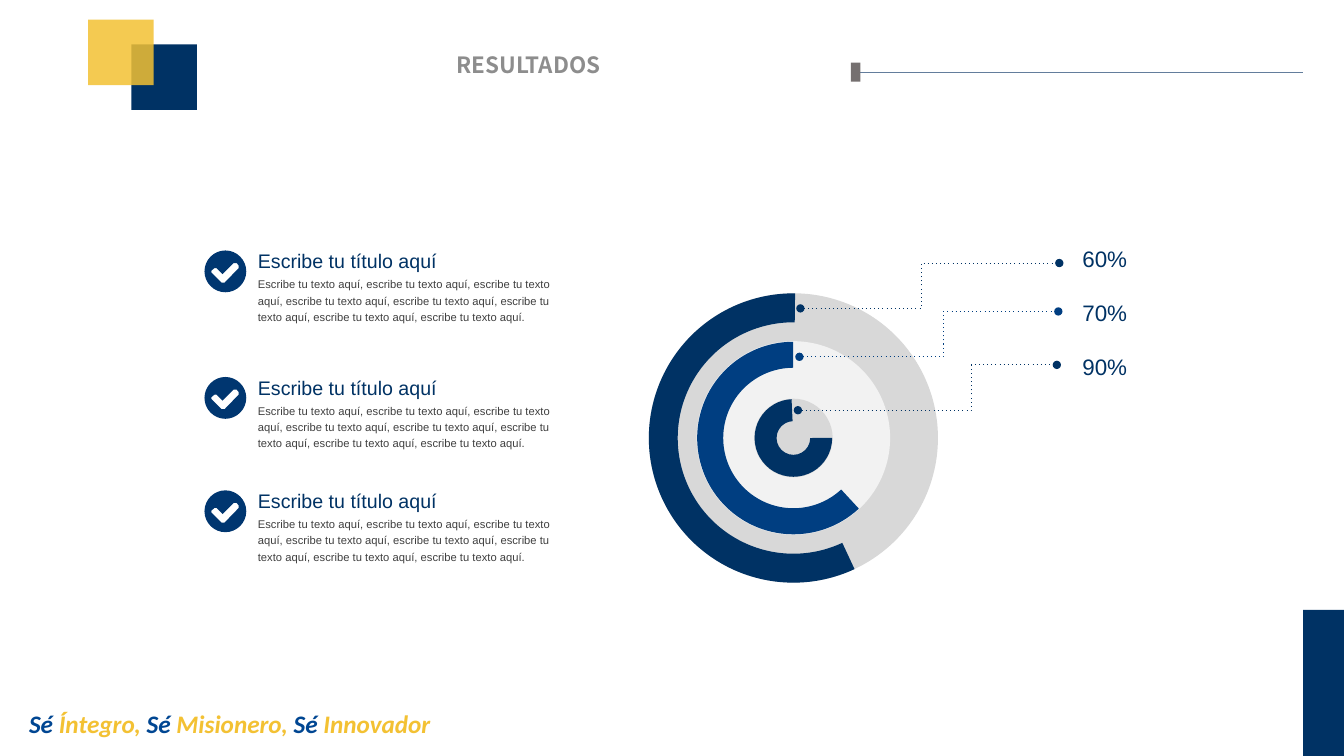
from dataclasses import dataclass

from lxml import etree
from pptx import Presentation
from pptx.dml.color import RGBColor
from pptx.enum.shapes import MSO_CONNECTOR, MSO_SHAPE
from pptx.enum.text import MSO_ANCHOR, MSO_AUTO_SIZE, PP_ALIGN
from pptx.oxml.ns import qn
from pptx.util import Inches, Pt

RECT, OVAL, ARC = MSO_SHAPE.RECTANGLE, MSO_SHAPE.OVAL, MSO_SHAPE.BLOCK_ARC
LINE, ELBOW = MSO_CONNECTOR.STRAIGHT, MSO_CONNECTOR.ELBOW
LEFT, MID = PP_ALIGN.LEFT, PP_ALIGN.CENTER
TOP, BASE = MSO_ANCHOR.TOP, MSO_ANCHOR.BOTTOM
GROW, FIXED = MSO_AUTO_SIZE.SHAPE_TO_FIT_TEXT, MSO_AUTO_SIZE.NONE

COLS, ROWS = 133.4, 75
CELL = Inches(0.1)
CURVE = 0.55


@dataclass(frozen=True)
class Theme:
    navy: str = "003264"
    blue: str = "003E81"
    badge: str = "003670"
    motto: str = "004692"
    gold: str = "F3C133"
    gray: str = "D8D8D8"
    pale: str = "F2F2F2"
    stone: str = "757070"
    rule: str = "637D9C"
    head: str = "8D8D8D"
    ink: str = "3F3F3F"
    sans: str = "Arial"
    slant: str = "Calibri"
    title: str = "Noto Sans CJK SC"
    large: int = 18
    main: int = 16
    sub: int = 14
    small: int = 8


def grid(*cells):
    return [round(cell * CELL) for cell in cells]


def write(frame, text, size, tint, face, align=LEFT, gap=1.2, bold=False,
          slant=False, anchor=TOP, inset=(0, 0), wrap=True, fit=GROW):
    frame.word_wrap, frame.auto_size = wrap, fit
    frame.vertical_anchor = anchor
    frame.margin_left = frame.margin_right = grid(inset[0])[0]
    frame.margin_top = frame.margin_bottom = grid(inset[1])[0]
    para = frame.paragraphs[0]
    para.alignment, para.line_spacing = align, gap
    for part, color in [(text, tint)] if isinstance(text, str) else text:
        run = para.add_run()
        run.text = part
        font = run.font
        font.size, font.name, font.bold, font.italic = Pt(size), face, bold, slant
        font.color.rgb = RGBColor.from_string(color)


class Board:
    def __init__(self, deck, theme):
        self.theme = theme
        self.slide = deck.slides.add_slide(deck.slide_layouts[5])
        self.shapes = self.slide.shapes

    def paint(self, shape, tint):
        shape.shadow.inherit = False
        shape.fill.solid()
        shape.fill.fore_color.rgb = RGBColor.from_string(tint)
        shape.line.fill.background()
        return shape

    def block(self, kind, x, y, w, h, tint, alpha=None):
        shape = self.paint(self.shapes.add_shape(kind, *grid(x, y, w, h)), tint)
        if alpha:
            color = shape.fill._xPr.find(".//" + qn("a:srgbClr"))
            etree.SubElement(color, qn("a:alpha"), val=str(alpha * 1000))
        return shape

    def disc(self, x, y, size, tint, kind=OVAL):
        return self.block(kind, x - size / 2, y - size / 2, size, size, tint)

    def arc(self, x, y, size, tint, marks):
        shape = self.disc(x, y, size, tint, ARC)
        shape.rotation = 180
        for index, mark in enumerate(marks):
            shape.adjustments[index] = mark

    def line(self, kind, x, y, end, stop, tint, bend=None):
        link = self.shapes.add_connector(kind, *grid(x, y, end, stop))
        link.line.width = Pt(0.75)
        link.line.color.rgb = RGBColor.from_string(tint)
        props = link._element.spPr
        if bend:
            stroke = props.find(qn("a:ln"))
            etree.SubElement(stroke, qn("a:prstDash"), val="dot")
            for tip in ("a:headEnd", "a:tailEnd"):
                etree.SubElement(stroke, qn(tip), type="oval")
            etree.SubElement(props.find(".//" + qn("a:avLst")), qn("a:gd"),
                             name="adj1", fmla=f"val {round(bend * 100000)}")
        etree.SubElement(props, qn("a:effectLst"))

    def label(self, x, y, w, h, text, size, tint, face=None, **form):
        box = self.shapes.add_textbox(*grid(x, y, w, h))
        write(box.text_frame, text, size, tint, face or self.theme.sans, **form)

    def title(self, x, y, w, h, text):
        box = self.shapes.title
        box.left, box.top, box.width, box.height = grid(x, y, w, h)
        write(box.text_frame, text, self.theme.main, self.theme.head,
              self.theme.title, align=MID, bold=True, inset=(1.3, 1.3), fit=FIXED)

    def check(self, x, y, size):
        half = size / 2
        ring = [(half, size), (0, half), (half, 0), (size, half), (half, size)]
        tick = [(3.4, 1.5), (3.2, 1.25), (2.9, 1.25), (1.8, 2.35), (1.2, 1.75),
                (1, 1.75), (0.7, 2), (0.7, 2.2), (1.7, 3.2), (2, 3.2),
                (3.4, 1.75)]
        outer, inner = [[grid(x + dx, y + dy) for dx, dy in path]
                        for path in (ring, tick)]
        pen = self.shapes.build_freeform(*outer[0])
        pen.add_line_segments(outer[1:], close=True)
        pen.move_to(*inner[0])
        pen.add_line_segments(inner[1:], close=True)
        shape = self.paint(pen.convert_to_shape(), self.theme.badge)
        sides = shape._element.findall(".//" + qn("a:lnTo"))
        for side, (px, py), (qx, qy) in zip(sides, ring, ring[1:]):
            side.tag = qn("a:cubicBezTo")
            pull = [(px + CURVE * (qx - half), py + CURVE * (qy - half)),
                    (qx + CURVE * (px - half), qy + CURVE * (py - half))]
            for index, spot in enumerate(pull):
                dx, dy = grid(*spot)
                knot = etree.Element(qn("a:pt"), x=str(dx), y=str(dy))
                side.insert(index, knot)


def main():
    deck = Presentation()
    deck.slide_width, deck.slide_height = grid(COLS, ROWS)
    look = Theme()
    board = Board(deck, look)

    board.line(LINE, 129.3, 7.2, 85.3, 7.2, look.rule)
    board.block(RECT, 84.45, 6.2, 0.95, 1.9, look.stone)
    board.block(RECT, 13.05, 4.4, 6.5, 6.5, look.navy)
    board.block(RECT, 8.75, 1.95, 6.5, 6.5, look.gold, alpha=85)
    board.block(RECT, 129.35, 60.5, COLS - 129.35, ROWS - 60.5, look.navy)
    motto = [(part, tint)
             for word in (" Íntegro, ", " Misionero, ", " Innovador")
             for part, tint in (("Sé", look.motto), (word, look.gold))]
    board.label(1.9, 69.75, 55.6, 4, motto, look.large, look.motto, look.slant,
                gap=1, bold=True, slant=True, inset=(1, 0.5))
    board.title(21, 3.2, 62.9, 7.7, "RESULTADOS")

    hub = (78.75, 43.45)
    rings = [
        (28.7, look.gray, 28.7, look.navy, (146.99, 54.4, 0.1)),
        (19.2, look.pale, 19.1, look.blue, (136.3, 53.9, 0.135)),
        (7.8, look.gray, 7.7, look.navy, (108, 52.37, 0.283)),
    ]
    for size, tint, *_ in rings:
        board.disc(*hub, size, tint)
    for _, _, size, tint, marks in rings:
        board.arc(*hub, size, tint, marks)

    calls = [
        ("60%", 79.45, 30.6, look.navy, 0.467),
        ("70%", 79.35, 35.4, look.blue, 0.556),
        ("90%", 79.2, 40.7, look.navy, 0.67),
    ]
    for index, (share, x, y, tint, bend) in enumerate(calls):
        board.line(ELBOW, x, y, x + 25.7, y - 4.5, tint, bend)
        board.label(107.4, 24.3 + 5.35 * index, 4.5, 2.7, share, look.main,
                    look.navy, align=MID, anchor=BASE, wrap=False)

    phrase = ", ".join(["escribe tu texto aquí"] * 8) + "."
    for y in (24.25, 36.8, 48.05):
        board.label(25.6, y, 17.9, 2.4, "Escribe tu título aquí", look.sub,
                    look.navy)
        board.label(25.6, y + 3.05, 30.2, 4.6, "E" + phrase[1:], look.small,
                    look.ink)
        board.check(20.3, y + 0.6, 4.15)

    deck.save("out.pptx")


if __name__ == "__main__":
    main()
